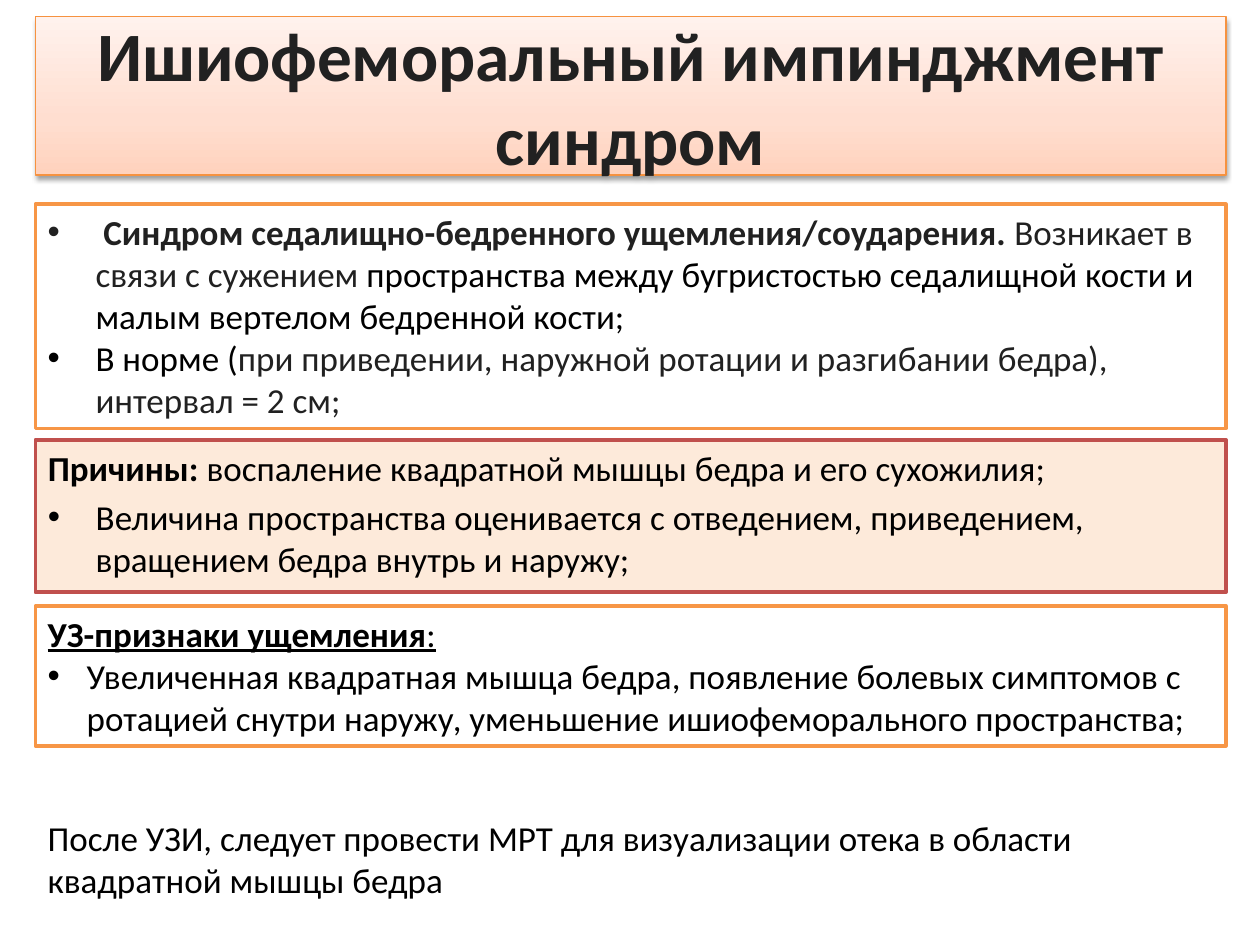
from copy import deepcopy
from lxml.etree import SubElement as Sub
from pptx import Presentation
from pptx.dml.color import RGBColor
from pptx.enum.shapes import MSO_SHAPE as Shape
from pptx.enum.text import MSO_ANCHOR as Anchor, MSO_AUTO_SIZE as Auto, PP_ALIGN as Align
from pptx.oxml.ns import qn
from pptx.util import Inches, Pt

LEFT, WIDTH = 0.28, 9.45
DARK, BLACK = "212121", "000000"
TITLE = "Ишиофеморальный импинджмент синдром"
STOPS = [(0, "FFD2BD"), (0.35, "FFDED0"), (1, "FFF2ED")]

# Paragraph: (indent, [(words, colour, style)])
CAUSES = [
    (0, [("Причины:", BLACK, "b"),
         (" воспаление квадратной мышцы бедра и его сухожилия;", BLACK, "")]),
    (0.38, [("Величина пространства оценивается с отведением, приведением, "
             "вращением бедра внутрь и наружу;", BLACK, "")]),
]
ABOUT = [
    (0.38, [(" Синдром седалищно-бедренного ущемления/соударения. ", DARK, "b"),
            ("Возникает в связи с сужением ", DARK, ""),
            ("пространства между бугристостью седалищной кости и малым "
             "вертелом бедренной кости;", BLACK, "")]),
    (0.38, [("В норме (", BLACK, ""),
            ("при приведении, наружной ротации и разгибании бедра), "
             "интервал = 2 см;", DARK, "")]),
]
SIGNS = [
    (0, [("УЗ-признаки ущемления", BLACK, "bu"), (":", BLACK, "u")]),
    (0.31, [("Увеличенная квадратная мышца бедра, появление болевых симптомов с "
             "ротацией снутри наружу, уменьшение ишиофеморального пространства;",
             BLACK, "")]),
]
NEXT = [
    (0, [("После УЗИ, следует провести МРТ для визуализации отека в области "
          "квадратной мышцы бедра", BLACK, "")]),
]


def rgb(code):
    return RGBColor.from_string(code)


def place(box, top, height):
    box.left, box.top = Inches(LEFT), Inches(top)
    box.width, box.height = Inches(WIDTH), Inches(height)


def style(font, size, color, marks):
    font.name, font.size = "Calibri", Pt(size)
    font.color.rgb = rgb(color)
    font.bold, font.underline = "b" in marks, "u" in marks


def frame(box, line, width, fill=None):
    box.line.color.rgb, box.line.width = rgb(line), Pt(width)
    if fill:
        box.fill.solid()
        box.fill.fore_color.rgb = rgb(fill)


def write(box, paras):
    text = box.text_frame
    text.word_wrap, text.auto_size = True, Auto.NONE
    text.vertical_anchor = Anchor.TOP
    for i, (indent, runs) in enumerate(paras):
        para = text.paragraphs[0] if i == 0 else text.add_paragraph()
        para.alignment = Align.LEFT
        props = para._p.get_or_add_pPr()
        props.set("marL", str(Inches(indent)))
        props.set("indent", str(-Inches(indent)))
        if indent:
            Sub(props, qn("a:buFont"), typeface="Arial")
            Sub(props, qn("a:buChar"), char="•")
        else:
            Sub(props, qn("a:buNone"))
        for words, color, marks in runs:
            run = para.add_run()
            run.text = words
            style(run.font, 20, color, marks)


def shade(box):
    box.fill.gradient()
    box.fill.gradient_angle = 90
    stop = box._element.spPr.find(".//" + qn("a:gs"))
    stop.addnext(deepcopy(stop))
    for grad, (pos, color) in zip(box.fill.gradient_stops, STOPS):
        grad.position, grad.color.rgb = pos, rgb(color)


def shadow(box):
    effects = Sub(box._element.spPr, qn("a:effectLst"))
    outer = Sub(effects, qn("a:outerShdw"), blurRad=str(Pt(3.1)),
                dist=str(Pt(1.6)), dir="5400000", rotWithShape="0")
    color = Sub(outer, qn("a:srgbClr"), val=BLACK)
    Sub(color, qn("a:alpha"), val="38000")


def main():
    deck = Presentation()
    deck.slide_width, deck.slide_height = Inches(10), Inches(7.5)
    slide = deck.slides.add_slide(deck.slide_layouts[1])

    title, body = slide.placeholders
    place(title, 0.13, 1.26)
    shade(title)
    frame(title, "F69240", 0.75)
    shadow(title)
    head = title.text_frame
    head.text = TITLE
    head.auto_size, head.vertical_anchor = Auto.NONE, Anchor.MIDDLE
    head.paragraphs[0].alignment = Align.CENTER
    style(head.paragraphs[0].runs[0].font, 39.6, DARK, "b")

    place(body, 3.49, 1.21)
    frame(body, "C0504D", 2, "FDEADA")
    write(body, CAUSES)

    for top, height, paras in [(1.62, 1.78, ABOUT), (4.81, 1.11, SIGNS)]:
        box = slide.shapes.add_shape(Shape.RECTANGLE, 0, 0, 0, 0)
        box.shadow.inherit = False
        place(box, top, height)
        frame(box, "F79646", 2, "FFFFFF")
        write(box, paras)

    note = slide.shapes.add_textbox(0, 0, 0, 0)
    place(note, 6.43, 0.77)
    write(note, NEXT)

    deck.save("out.pptx")


if __name__ == "__main__":
    main()
